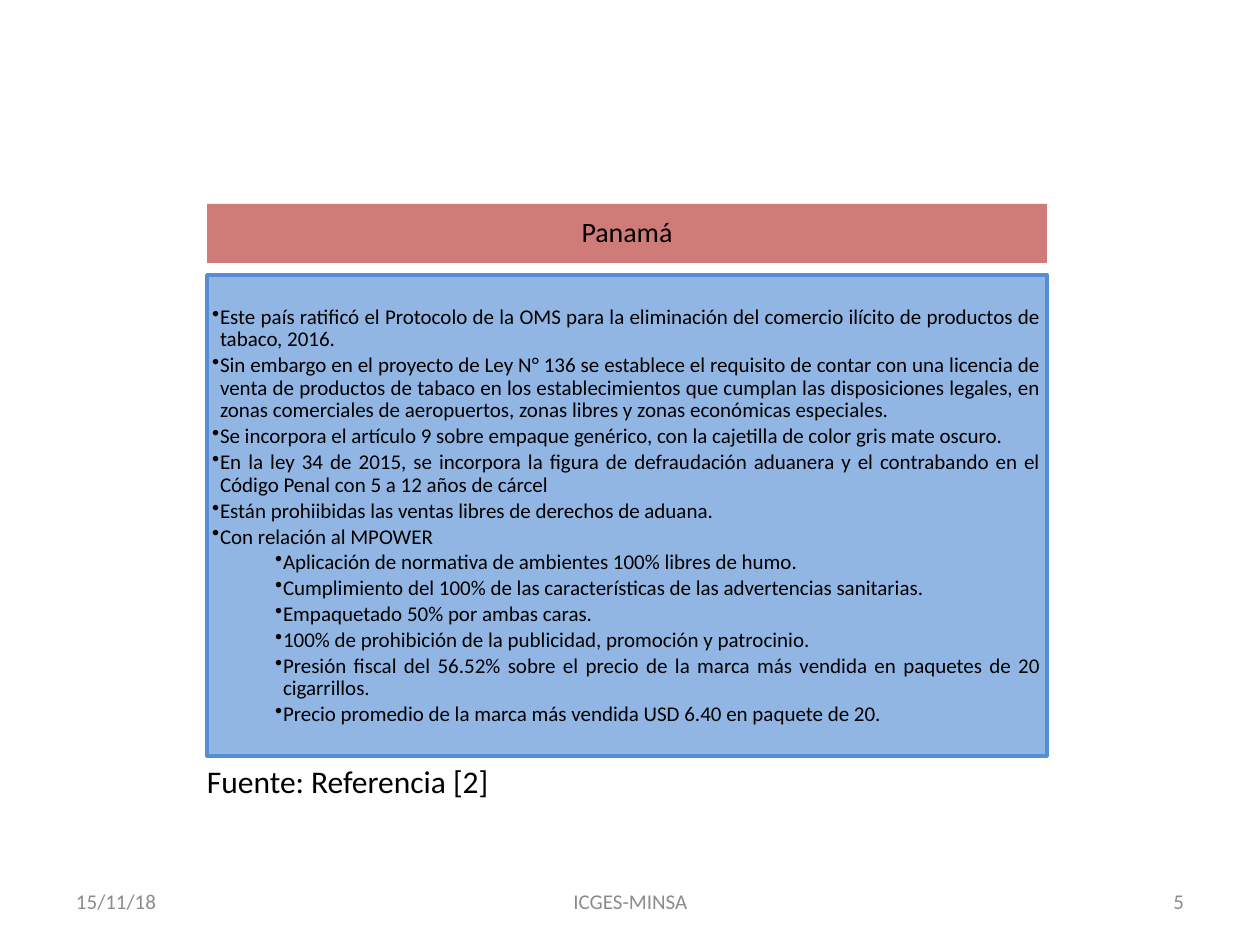
from dataclasses import dataclass

from lxml.etree import SubElement as Sub
from pptx import Presentation
from pptx.dml.color import RGBColor as Rgb
from pptx.enum.shapes import MSO_SHAPE as Kind
from pptx.enum.text import MSO_ANCHOR as Anchor, PP_ALIGN as Align
from pptx.oxml.ns import qn
from pptx.util import Pt

SCALE = 914400 / 126  # EMU in one px
HUES = {"red": "C0504D", "blue": "558ED5", "ink": "000000", "gray": "8C8C8C"}
FONT = "Calibri"


@dataclass
class Box:
    x: int
    y: int
    w: int
    h: int


@dataclass
class Label:
    box: Box
    text: str
    size: int = 12
    hue: str = "gray"
    align: Align = Align.LEFT
    anchor: Anchor = Anchor.MIDDLE


@dataclass
class Panel:
    box: Box
    hue: str
    alpha: int  # opacity of each layer, percent
    lines: tuple[float, ...]  # line width of each layer, back to front


@dataclass
class Item:
    text: str
    level: int = 1


HEAD = Panel(Box(207, 204, 840, 59), "red", 50, (0, 0))
BODY = Panel(Box(207, 275, 840, 481), "blue", 40, (2, 0.75))

ITEMS = [
    Item("Este país ratificó el Protocolo de la OMS para la eliminación del "
         "comercio ilícito de productos de tabaco, 2016."),
    Item("Sin embargo en el proyecto de Ley N° 136 se establece el requisito de "
         "contar con una licencia de venta de productos de tabaco en los "
         "establecimientos que cumplan las disposiciones legales, en zonas "
         "comerciales de aeropuertos, zonas libres y zonas económicas especiales."),
    Item("Se incorpora el artículo 9 sobre empaque genérico, con la cajetilla de "
         "color gris mate oscuro."),
    Item("En la ley 34 de 2015, se incorpora la figura de defraudación aduanera y "
         "el contrabando en el Código Penal con 5 a 12 años de cárcel"),
    Item("Están prohiibidas las ventas libres de derechos de aduana."),
    Item("Con relación al MPOWER"),
    Item("Aplicación de normativa de ambientes 100% libres de humo.", 2),
    Item("Cumplimiento del 100% de las características de las advertencias "
         "sanitarias.", 2),
    Item("Empaquetado 50% por ambas caras.", 2),
    Item("100% de prohibición de la publicidad, promoción y patrocinio.", 2),
    Item("Presión fiscal del 56.52% sobre el precio de la marca más vendida en "
         "paquetes de 20 cigarrillos.", 2),
    Item("Precio promedio de la marca más vendida USD 6.40 en paquete de 20.", 2),
]

LABELS = [
    Label(Box(63, 876, 294, 50), "15/11/18"),
    Label(Box(431, 876, 399, 50), "ICGES-MINSA", align=Align.CENTER),
    Label(Box(903, 876, 294, 50), "5", align=Align.RIGHT),
    Label(Box(194, 756, 367, 50), "Fuente: Referencia [2]", 18, "ink",
          anchor=Anchor.TOP),
]


def px(n: int) -> int:
    return round(n * SCALE)


def place(box: Box) -> list[int]:
    return [px(n) for n in (box.x, box.y, box.w, box.h)]


def color(hue: str) -> Rgb:
    return Rgb.from_string(HUES[hue])


def set_frame(frame, anchor: Anchor, pads: tuple[int, int, int, int]) -> None:
    frame.word_wrap = True
    frame.vertical_anchor = anchor
    (frame.margin_left, frame.margin_top,
     frame.margin_right, frame.margin_bottom) = map(px, pads)


def add_run(para, text: str, size: int, hue: str, align: Align) -> None:
    para.alignment = align
    run = para.add_run()
    run.text = text
    run.font.name = FONT
    run.font.size = Pt(size)
    run.font.color.rgb = color(hue)


def add_label(slide, label: Label) -> None:
    frame = slide.shapes.add_textbox(*place(label.box)).text_frame
    set_frame(frame, label.anchor, (13, 6, 13, 6))
    add_run(frame.paragraphs[0], label.text, label.size, label.hue, label.align)


def add_panel(slide, panel: Panel):
    """Stack the clear layers and return the text frame of the front one."""
    for width in panel.lines:
        shape = slide.shapes.add_shape(Kind.RECTANGLE, *place(panel.box))
        shape.shadow.inherit = False
        shape.fill.solid()
        shape.fill.fore_color.rgb = color(panel.hue)
        tint = shape.fill._xPr.find(".//" + qn("a:srgbClr"))
        Sub(tint, qn("a:alpha"), val=str(panel.alpha * 1000))
        if width:
            shape.line.color.rgb = color(panel.hue)
            shape.line.width = Pt(width)
        else:
            shape.line.fill.background()
    return shape.text_frame


def add_item(para, item: Item) -> None:
    props = para._p.get_or_add_pPr()
    props.set("marL", str(px(8 + 63 * (item.level - 1))))
    props.set("indent", str(px(-8)))
    Sub(props, qn("a:buChar"), char="•")
    para.level = item.level
    para.line_spacing = 0.9
    para.space_after = Pt(1.8)
    add_run(para, item.text, 12, "ink", Align.JUSTIFY)


def main() -> None:
    deck = Presentation()
    deck.slide_width, deck.slide_height = px(1260), px(945)
    slide = deck.slides.add_slide(deck.slide_layouts[6])

    # Country heading
    frame = add_panel(slide, HEAD)
    set_frame(frame, Anchor.MIDDLE, (6, 4, 6, 4))
    frame.paragraphs[0].line_spacing = 0.9
    add_run(frame.paragraphs[0], "Panamá", 16, "ink", Align.CENTER)

    # Bulleted findings
    frame = add_panel(slide, BODY)
    set_frame(frame, Anchor.TOP, (5, 31, 6, 8))
    for i, item in enumerate(ITEMS):
        para = frame.add_paragraph() if i else frame.paragraphs[0]
        add_item(para, item)

    # Footer and credit line
    for label in LABELS:
        add_label(slide, label)

    deck.save("out.pptx")


if __name__ == "__main__":
    main()
